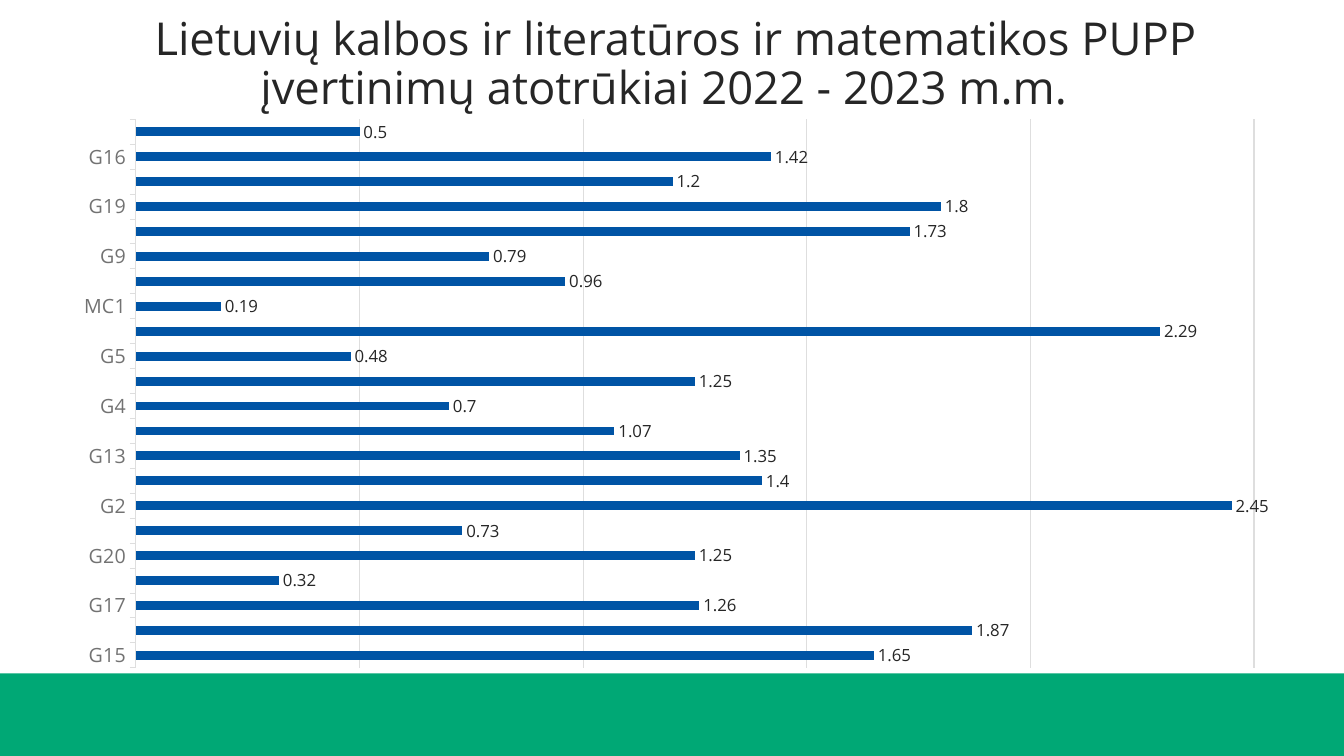
"""Build a slide with a bar chart of grade gaps between two school exams."""
from dataclasses import dataclass

from lxml.etree import SubElement
from pptx import Presentation
from pptx.chart.axis import CategoryAxis, ValueAxis
from pptx.chart.chart import Chart
from pptx.chart.data import CategoryChartData as ChartData
from pptx.dml.color import RGBColor as Rgb
from pptx.enum.chart import XL_CHART_TYPE as ChartType
from pptx.enum.chart import XL_LABEL_POSITION as LabelPosition
from pptx.enum.chart import XL_TICK_LABEL_POSITION as TickLabelPosition
from pptx.enum.chart import XL_TICK_MARK as TickMark
from pptx.enum.shapes import MSO_SHAPE as Preset
from pptx.enum.text import MSO_ANCHOR as Anchor
from pptx.enum.text import MSO_AUTO_SIZE as AutoSize
from pptx.enum.text import PP_ALIGN as Align
from pptx.oxml import parse_xml
from pptx.oxml.ns import nsdecls, qn
from pptx.slide import Slide
from pptx.util import Cm, Pt


@dataclass(frozen=True)
class Theme:
    font: str = "Open Sans"
    text: Rgb = Rgb(0x26, 0x26, 0x26)
    muted: Rgb = Rgb(0x72, 0x72, 0x72)
    grid: Rgb = Rgb(0xDE, 0xDE, 0xDE)
    bar: Rgb = Rgb(0x00, 0x54, 0xA5)
    band: Rgb = Rgb(0x00, 0xA8, 0x75)
    title_size: float = 32.4
    axis_size: float = 14
    label_size: float = 12
    chart_size: float = 10
    line_width: float = 0.75


@dataclass(frozen=True)
class Area:
    left: float
    top: float
    width: float
    height: float

    def lengths(self) -> tuple[Cm, Cm, Cm, Cm]:
        return Cm(self.left), Cm(self.top), Cm(self.width), Cm(self.height)


@dataclass(frozen=True)
class SchoolGap:
    school: str
    gap: float


THEME = Theme()
SLIDE_WIDTH, SLIDE_HEIGHT = 33.87, 19.05
BAND_AREA = Area(0, 16.97, SLIDE_WIDTH, 2.08)
TITLE_AREA = Area(1.52, 0.76, 30.73, 2.26)
CHART_AREA = Area(1.52, 2.72, 30.73, 14.4)
PLOT_SHARES = {"x": 0.062, "y": 0.02, "w": 0.917, "h": 0.96}
TITLE = " Lietuvių kalbos ir literatūros ir matematikos PUPP įvertinimų atotrūkiai 2022 - 2023 m.m. "
GAPS = [
    SchoolGap("G15", 1.65), SchoolGap("G10", 1.87), SchoolGap("G17", 1.26),
    SchoolGap("G18", 0.32), SchoolGap("G20", 1.25), SchoolGap("G8", 0.73),
    SchoolGap("G2", 2.45), SchoolGap("G11", 1.4), SchoolGap("G13", 1.35),
    SchoolGap("G3", 1.07), SchoolGap("G4", 0.7), SchoolGap("G14", 1.25),
    SchoolGap("G5", 0.48), SchoolGap("G12", 2.29), SchoolGap("MC1", 0.19),
    SchoolGap("G1", 0.96), SchoolGap("G9", 0.79), SchoolGap("G21", 1.73),
    SchoolGap("G19", 1.8), SchoolGap("G7", 1.2), SchoolGap("G16", 1.42),
    SchoolGap("P1", 0.5),
]


def style_font(font, size: float, color: Rgb) -> None:
    font.name = THEME.font
    font.size = Pt(size)
    font.color.rgb = color


def style_line(line) -> None:
    line.color.rgb = THEME.grid
    line.width = Pt(THEME.line_width)


def add_band(page: Slide) -> None:
    band = page.shapes.add_shape(Preset.RECTANGLE, *BAND_AREA.lengths())
    band.shadow.inherit = False
    band.fill.solid()
    band.fill.fore_color.rgb = THEME.band
    band.line.fill.background()


def fill_title(page: Slide) -> None:
    box = page.shapes.title
    box.left, box.top, box.width, box.height = TITLE_AREA.lengths()
    frame = box.text_frame
    frame.word_wrap = True
    frame.auto_size = AutoSize.NONE
    frame.vertical_anchor = Anchor.BOTTOM
    para = frame.paragraphs[0]
    para.alignment = Align.CENTER
    para.line_spacing = 0.9
    span = para.add_run()
    span.text = TITLE
    style_font(span.font, THEME.title_size, THEME.text)


def style_school_axis(axis: CategoryAxis) -> None:
    axis.has_major_gridlines = False
    axis.major_tick_mark = TickMark.OUTSIDE
    axis.minor_tick_mark = TickMark.NONE
    axis.tick_label_position = TickLabelPosition.LOW
    style_font(axis.tick_labels.font, THEME.axis_size, THEME.muted)
    style_line(axis.format.line)
    every_second = parse_xml(f'<c:tickLblSkip {nsdecls("c")} val="2"/>')
    axis._element.find(qn("c:noMultiLvlLbl")).addprevious(every_second)


def style_gap_axis(axis: ValueAxis) -> None:
    axis.minimum_scale = 0
    axis.maximum_scale = 2.5
    axis.major_unit = 0.5
    axis.has_major_gridlines = True
    style_line(axis.major_gridlines.format.line)
    axis.visible = False


def style_bars(chart: Chart) -> None:
    plot = chart.plots[0]
    plot.gap_width = 182
    plot.vary_by_categories = False
    bars = plot.series[0]
    bars.format.fill.solid()
    bars.format.fill.fore_color.rgb = THEME.bar
    labels = bars.data_labels
    labels.show_value = True
    labels.position = LabelPosition.OUTSIDE_END
    style_font(labels.font, THEME.label_size, THEME.text)


def place_plot(chart: Chart) -> None:
    plot_area = chart._chartSpace.chart.plotArea
    for old_layout in plot_area.findall(qn("c:layout")):
        plot_area.remove(old_layout)
    layout = parse_xml(f'<c:layout {nsdecls("c")}><c:manualLayout/></c:layout>')
    settings = {"layoutTarget": "inner", "xMode": "edge", "yMode": "edge", **PLOT_SHARES}
    for name, value in settings.items():
        SubElement(layout[0], qn(f"c:{name}")).set("val", str(value))
    plot_area.insert(0, layout)


def add_gap_chart(page: Slide) -> None:
    data = ChartData()
    data.categories = [item.school for item in GAPS]
    data.add_series("Series 1", [item.gap for item in GAPS])
    chart = page.shapes.add_chart(ChartType.BAR_CLUSTERED, *CHART_AREA.lengths(), data).chart
    chart.has_title = False
    chart.has_legend = False
    style_font(chart.font, THEME.chart_size, THEME.text)
    style_school_axis(chart.category_axis)
    style_gap_axis(chart.value_axis)
    style_bars(chart)
    place_plot(chart)


def main() -> None:
    deck = Presentation()
    deck.slide_width, deck.slide_height = Cm(SLIDE_WIDTH), Cm(SLIDE_HEIGHT)
    page = deck.slides.add_slide(deck.slide_layouts.get_by_name("Title Only"))
    add_band(page)
    fill_title(page)
    add_gap_chart(page)
    deck.save("out.pptx")


if __name__ == "__main__":
    main()
